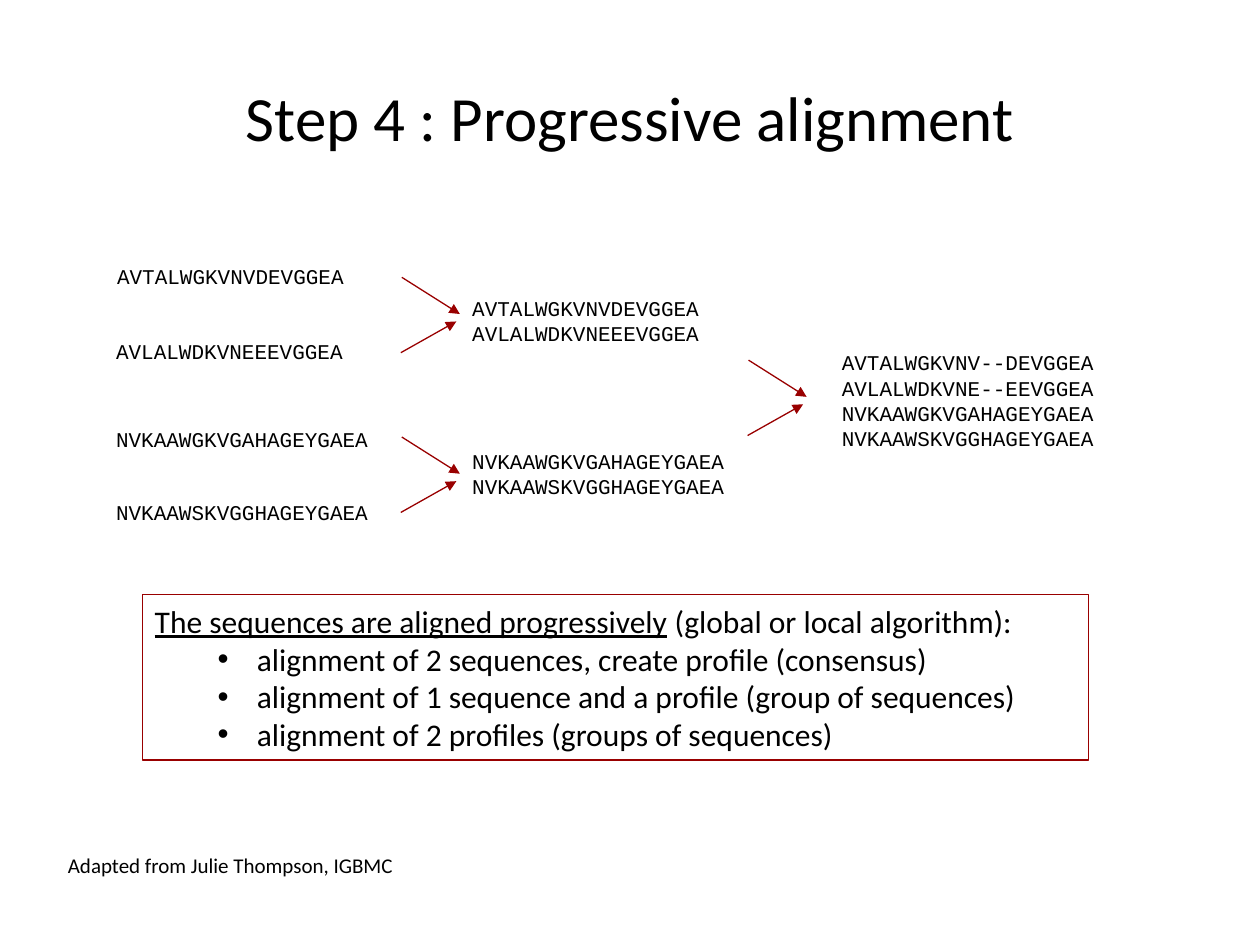
from dataclasses import dataclass

import pptx
import pptx.dml.color
import pptx.enum.shapes
import pptx.enum.text
import pptx.oxml
import pptx.oxml.ns
import pptx.util

Cm = pptx.util.Cm
Pt = pptx.util.Pt
RGB = pptx.dml.color.RGBColor
ANCHOR = pptx.enum.text.MSO_ANCHOR
ALIGN = pptx.enum.text.PP_ALIGN


@dataclass(frozen=True)
class Theme:
    ink: RGB = RGB(0x00, 0x00, 0x00)
    paper: RGB = RGB(0xFF, 0xFF, 0xFF)
    accent: RGB = RGB(0x99, 0x00, 0x00)
    sans: str = "Calibri"
    mono: str = "Courier New"
    title: int = 36
    body: int = 18
    small: int = 12
    line: float = 0.75


THEME = Theme()

SEQUENCE_1 = "AVTALWGKVNVDEVGGEA"
SEQUENCE_2 = "AVLALWDKVNEEEVGGEA"
SEQUENCE_3 = "NVKAAWGKVGAHAGEYGAEA"
SEQUENCE_4 = "NVKAAWSKVGGHAGEYGAEA"

# Left, top and the aligned rows of each block, in cm
BLOCKS = [
    (2.11, 5.18, [SEQUENCE_1]),
    (2.09, 6.69, [SEQUENCE_2]),
    (2.09, 8.47, [SEQUENCE_3]),
    (2.09, 9.95, [SEQUENCE_4]),
    (9.27, 5.83, [SEQUENCE_1, SEQUENCE_2]),
    (9.27, 8.92, [SEQUENCE_3, SEQUENCE_4]),
    (16.72, 6.93, ["AVTALWGKVNV--DEVGGEA", "AVLALWDKVNE--EEVGGEA",
                   SEQUENCE_3, SEQUENCE_4]),
]

# Top left corner of each pair of converging arrows, in cm
MERGES = [(8.08, 5.59), (15.07, 7.26), (8.08, 8.81)]

RULES = [
    "alignment of 2 sequences, create profile (consensus)",
    "alignment of 1 sequence and a profile (group of sequences)",
    "alignment of 2 profiles (groups of sequences)",
]


def add_run(p, text, size, font=THEME.sans, underline=None):
    r = p.add_run()
    r.text = text
    r.font.size = Pt(size)
    r.font.name = font
    r.font.color.rgb = THEME.ink
    r.font.underline = underline


def add_text(s, box, lines, size, font=THEME.sans, align=ALIGN.LEFT,
             anchor=ANCHOR.MIDDLE):
    tf = s.shapes.add_textbox(*map(Cm, box)).text_frame
    tf.word_wrap = True
    tf.vertical_anchor = anchor
    for i, line in enumerate(lines):
        p = tf.add_paragraph() if i else tf.paragraphs[0]
        p.alignment = align
        add_run(p, line, size, font)


def add_block(s, left, top, rows):
    height = 0.25 + 0.51 * len(rows)
    add_text(s, (left, top, 5.72, height), rows, THEME.small, THEME.mono,
             anchor=ANCHOR.TOP)


def add_arrow(s, x1, y1, x2, y2):
    cx = s.shapes.add_connector(pptx.enum.shapes.MSO_CONNECTOR.STRAIGHT,
                                Cm(x1), Cm(y1), Cm(x2), Cm(y2))
    cx.line.color.rgb = THEME.accent
    cx.line.width = Pt(THEME.line)
    head = pptx.oxml.parse_xml(
        f'<a:tailEnd {pptx.oxml.ns.nsdecls("a")} type="triangle"/>')
    cx.line._get_or_add_ln().append(head)
    cx._element.spPr.append(pptx.oxml.parse_xml(
        f'<a:effectLst {pptx.oxml.ns.nsdecls("a")}/>'))


def add_merge(s, x, y):
    add_arrow(s, x + 0.02, y, x + 1.19, y + 0.74)
    add_arrow(s, x, y + 1.52, x + 1.12, y + 0.89)


def make_bullet(p):
    pPr = p._p.get_or_add_pPr()
    pPr.set("lvl", "1")
    pPr.set("marL", str(Cm(2.06)))
    pPr.set("indent", str(Cm(-0.79)))
    ns = pptx.oxml.ns.nsdecls("a")
    pPr.append(pptx.oxml.parse_xml(f'<a:buFont {ns} typeface="Arial"/>'))
    pPr.append(pptx.oxml.parse_xml(f'<a:buChar {ns} char="•"/>'))


def add_summary(s):
    sp = s.shapes.add_shape(pptx.enum.shapes.MSO_SHAPE.RECTANGLE,
                            Cm(2.87), Cm(11.99), Cm(19.08), Cm(3.33))
    sp.shadow.inherit = False
    sp.fill.solid()
    sp.fill.fore_color.rgb = THEME.paper
    sp.line.color.rgb = THEME.accent
    sp.line.width = Pt(THEME.line)
    tf = sp.text_frame
    tf.word_wrap = True
    tf.vertical_anchor = ANCHOR.MIDDLE
    p = tf.paragraphs[0]
    p.alignment = ALIGN.LEFT
    add_run(p, "The sequences are aligned progressively", THEME.body,
            underline=True)
    add_run(p, " (global or local algorithm):", THEME.body)
    for rule in RULES:
        p = tf.add_paragraph()
        p.alignment = ALIGN.LEFT
        make_bullet(p)
        add_run(p, rule, THEME.body)


def main():
    prs = pptx.Presentation()
    prs.slide_width, prs.slide_height = Cm(25.4), Cm(19.05)
    s = prs.slides.add_slide(prs.slide_layouts[6])

    # Title
    add_text(s, (1.27, 0.76, 22.86, 3.18), ["Step 4 : Progressive alignment"],
             THEME.title, align=ALIGN.CENTER)

    # Sequences and the arrows that merge them
    for x, y in MERGES:
        add_merge(s, x, y)
    for left, top, rows in BLOCKS:
        add_block(s, left, top, rows)

    # Summary and credit
    add_summary(s)
    add_text(s, (1.12, 16.94, 7.14, 1.02),
             ["Adapted from Julie Thompson, IGBMC"], THEME.small)

    prs.save("out.pptx")


if __name__ == "__main__":
    main()
